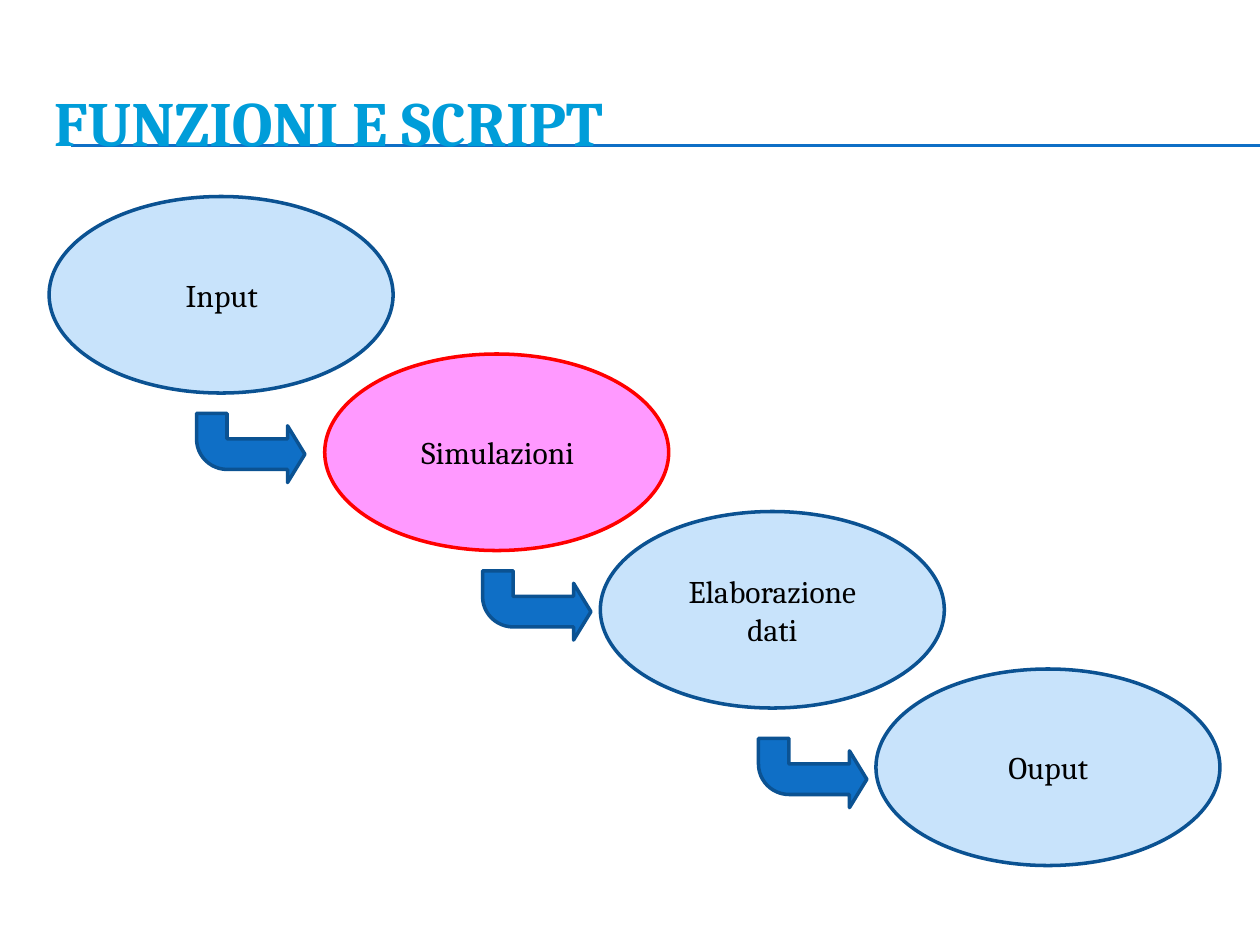
"""Build the "Funzioni e script" slide: four stages stepping down, joined by bent arrows."""
import pptx
import pptx.dml.color
import pptx.enum.shapes
import pptx.enum.text
import pptx.oxml
import pptx.oxml.ns
import pptx.util

Inches, Pt = pptx.util.Inches, pptx.util.Pt
RGB = pptx.dml.color.RGBColor.from_string
MSO_SHAPE = pptx.enum.shapes.MSO_SHAPE
ANCHOR = pptx.enum.text.MSO_ANCHOR
ALIGN = pptx.enum.text.PP_ALIGN

THEME = {
    "font": "Cambria",
    "title_size": Pt(36),
    "label_size": Pt(18),
    "title": RGB("009DD9"),
    "text": RGB("000000"),
    "arrow": RGB("0F6FC6"),
    "edge": RGB("0B5292"),
    "stage": RGB("C8E3FB"),
    "focus": RGB("FF99FF"),
    "focus_edge": RGB("FF0000"),
}


def add_filled(kind, left, top, width, height, fill, edge):
    sp = s.shapes.add_shape(kind, Inches(left), Inches(top), Inches(width), Inches(height))
    sp.shadow.inherit = False
    sp.fill.solid()
    sp.fill.fore_color.rgb = fill
    sp.line.color.rgb = edge
    sp.line.width = Pt(2)
    return sp


def add_text(text, left, top, width, height, size, color, align, anchor):
    sp = s.shapes.add_textbox(Inches(left), Inches(top), Inches(width), Inches(height))
    tf = sp.text_frame
    tf.word_wrap = True
    tf.vertical_anchor = anchor
    p = tf.paragraphs[0]
    p.text = text
    p.alignment = align
    p.font.name = THEME["font"]
    p.font.size = size
    p.font.color.rgb = color
    return p


prs = pptx.Presentation()
prs.slide_width, prs.slide_height = Inches(10), Inches(7.5)
s = prs.slides.add_slide(prs.slide_layouts[6])

for y in (1.15, 1.16):
    rule = s.shapes.add_connector(
        pptx.enum.shapes.MSO_CONNECTOR.STRAIGHT, Inches(0.56), Inches(y), Inches(10), Inches(y))
    rule.line.color.rgb = THEME["arrow"]
    rule.line.width = Pt(0.75)
    rule._element.spPr.append(pptx.oxml.parse_xml(
        "<a:effectLst %s/>" % pptx.oxml.ns.nsdecls("a")))

title = add_text("FUNZIONI E SCRIPT", 0.33, 0.5, 9.5, 0.92,
                 THEME["title_size"], THEME["title"], ALIGN.LEFT, ANCHOR.MIDDLE)
title.font.bold = True

for i in range(4):
    focus = i == 1
    add_filled(MSO_SHAPE.OVAL, 0.39 + 2.1875 * i, 1.56 + 1.25 * i, 2.73, 1.56,
               THEME["focus" if focus else "stage"],
               THEME["focus_edge" if focus else "edge"])

for left, top in ((1.56, 3.28), (3.83, 4.53), (6.02, 5.86)):
    arrow = add_filled(MSO_SHAPE.BENT_ARROW, left, top, 0.86, 0.55,
                       THEME["arrow"], THEME["edge"])
    for i, value in enumerate((0.44, 0.41, 0.25, 0.44)):
        arrow.adjustments[i] = value
    arrow.rotation = 180
    arrow._element.spPr.xfrm.set("flipH", "1")

labels = (
    ("Input", 0.82, 2.14, 1.88, 0.4),
    ("Simulazioni", 3.09, 3.39, 1.72, 0.4),
    ("Elaborazione dati", 5.27, 4.49, 1.72, 0.71),
    ("Ouput", 7.58, 5.89, 1.48, 0.4),
)
for label in labels:
    add_text(*label, THEME["label_size"], THEME["text"], ALIGN.CENTER, ANCHOR.TOP)

prs.save("out.pptx")
